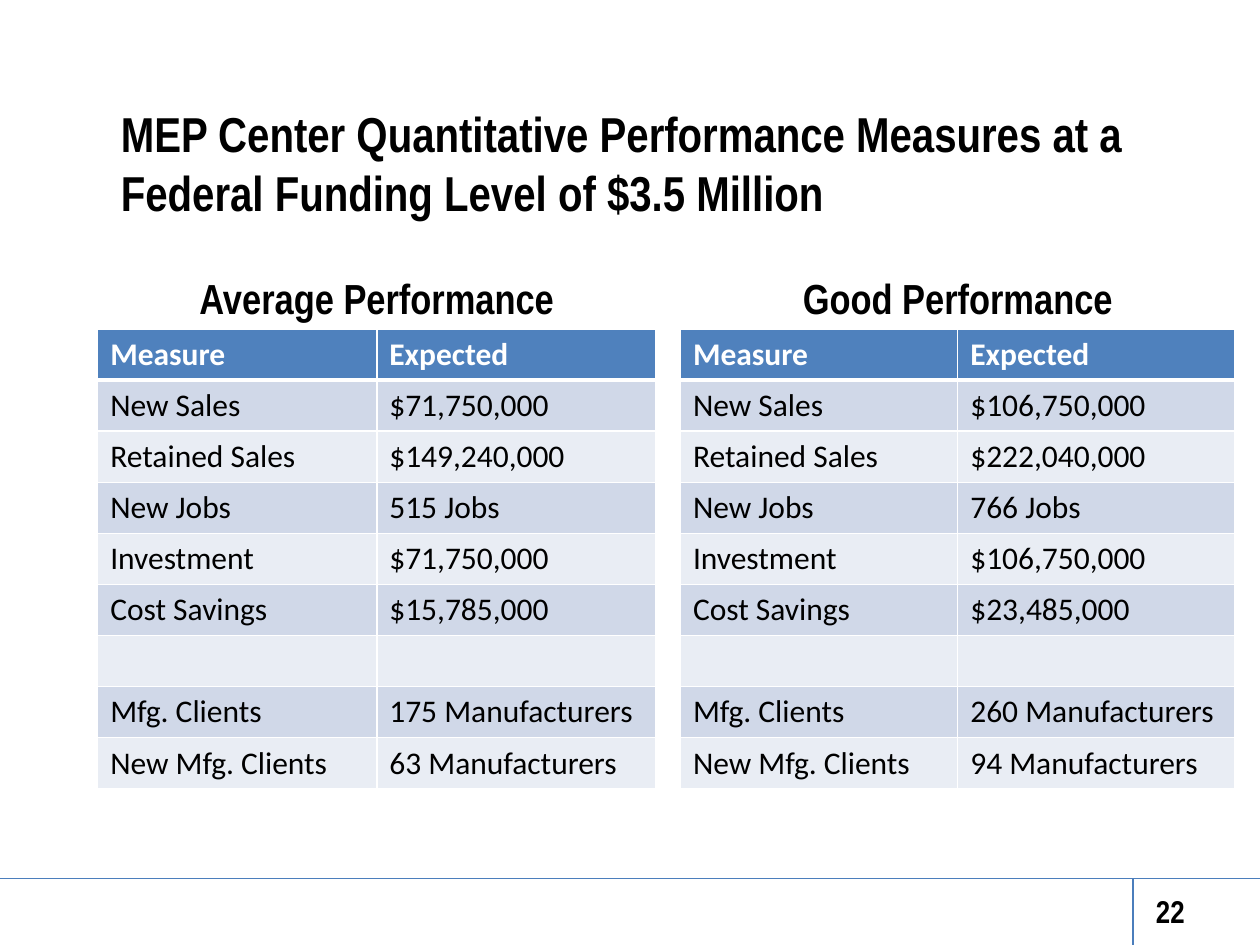
"""Build a slide comparing average and good performance measures in two tables."""
from dataclasses import dataclass

from lxml.etree import SubElement
from pptx import Presentation
from pptx.dml.color import RGBColor
from pptx.enum.shapes import MSO_CONNECTOR
from pptx.enum.text import MSO_ANCHOR, PP_ALIGN
from pptx.oxml.ns import qn
from pptx.util import Pt

BLACK, WHITE, BLUE, RULE = "000000", "FFFFFF", "4F81BD", "4B7EBC"
BANDS = ("D0D8E8", "E9EDF4")
MEASURES = ("Measure", "New Sales", "Retained Sales", "New Jobs", "Investment",
            "Cost Savings", "", "Mfg. Clients", "New Mfg. Clients")
TABLE_TOP, ROW_HEIGHT = 188, 29.2


@dataclass
class Label:
    text: str
    left: float
    top: float
    width: float
    height: float
    size: float
    align: PP_ALIGN = PP_ALIGN.LEFT
    anchor: MSO_ANCHOR = MSO_ANCHOR.MIDDLE


@dataclass
class Panel:
    heading: str
    left: float
    width: float
    expected: tuple[str, ...]


@dataclass
class Rule:
    x1: float
    y1: float
    x2: float
    y2: float


PANELS = (
    Panel("Average Performance", 55.8, 319,
          ("Expected", "$71,750,000", "$149,240,000", "515 Jobs", "$71,750,000",
           "$15,785,000", "", "175 Manufacturers", "63 Manufacturers")),
    Panel("Good Performance", 388.8, 317,
          ("Expected", "$106,750,000", "$222,040,000", "766 Jobs", "$106,750,000",
           "$23,485,000", "", "260 Manufacturers", "94 Manufacturers")),
)
LABELS = (
    Label("MEP Center Quantitative Performance Measures at a Federal Funding Level "
          "of $3.5 Million", 62, 64, 622, 58, 28),
    Label("22", 516, 512, 168, 17.3, 18, PP_ALIGN.RIGHT),
)
RULES = (Rule(0, 502, 720, 502), Rule(647.5, 502, 647.5, 540))


def color(value: str) -> RGBColor:
    return RGBColor.from_string(value)


def style_font(p, name: str, size: float, fill: str, bold: bool) -> None:
    p.font.name, p.font.size, p.font.bold = name, Pt(size), bold
    p.font.color.rgb = color(fill)


def add_rule(s, rule: Rule) -> None:
    line = s.shapes.add_connector(MSO_CONNECTOR.STRAIGHT, Pt(rule.x1), Pt(rule.y1),
                                  Pt(rule.x2), Pt(rule.y2))
    line.line.color.rgb = color(RULE)
    line.line.width = Pt(0.75)
    SubElement(line._element.spPr, qn("a:effectLst"))


def add_label(s, label: Label) -> None:
    sp = s.shapes.add_textbox(Pt(label.left), Pt(label.top), Pt(label.width), Pt(label.height))
    tf = sp.text_frame
    tf.word_wrap = True
    tf.vertical_anchor = label.anchor
    p = tf.paragraphs[0]
    p.text, p.alignment = label.text, label.align
    style_font(p, "Arial Narrow", label.size, BLACK, True)


def add_border(cell, side: str, width: float) -> None:
    ln = SubElement(cell._tc.get_or_add_tcPr(), qn(f"a:{side}"), w=str(Pt(width)))
    SubElement(SubElement(ln, qn("a:solidFill")), qn("a:srgbClr"), val=WHITE)


def fill_cell(cell, row: int, text: str) -> None:
    header = row == 0
    for side in ("lnL", "lnR", "lnT", "lnB"):
        thick = (row, side) in ((0, "lnB"), (1, "lnT"))
        add_border(cell, side, 3 if thick else 1)
    cell.fill.solid()
    cell.fill.fore_color.rgb = color(BLUE if header else BANDS[(row - 1) % 2])
    p = cell.text_frame.paragraphs[0]
    p.text = text
    style_font(p, "Calibri", 18, WHITE if header else BLACK, header)


def add_panel(s, panel: Panel) -> None:
    add_label(s, Label(panel.heading, panel.left, TABLE_TOP - 50.4, panel.width, 50.4, 24,
                       PP_ALIGN.CENTER, MSO_ANCHOR.BOTTOM))
    rows = len(MEASURES)
    table = s.shapes.add_table(rows, 2, Pt(panel.left), Pt(TABLE_TOP), Pt(panel.width),
                               Pt(rows * ROW_HEIGHT)).table
    for column in table.columns:
        column.width = Pt(panel.width / 2)
    for i, texts in enumerate(zip(MEASURES, panel.expected)):
        table.rows[i].height = Pt(ROW_HEIGHT)
        for j, text in enumerate(texts):
            fill_cell(table.cell(i, j), i, text)


def main() -> None:
    prs = Presentation()
    prs.slide_width, prs.slide_height = Pt(720), Pt(540)
    s = prs.slides.add_slide(prs.slide_layouts[6])
    for rule in RULES:
        add_rule(s, rule)
    for label in LABELS:
        add_label(s, label)
    for panel in PANELS:
        add_panel(s, panel)
    prs.save("out.pptx")


if __name__ == "__main__":
    main()
